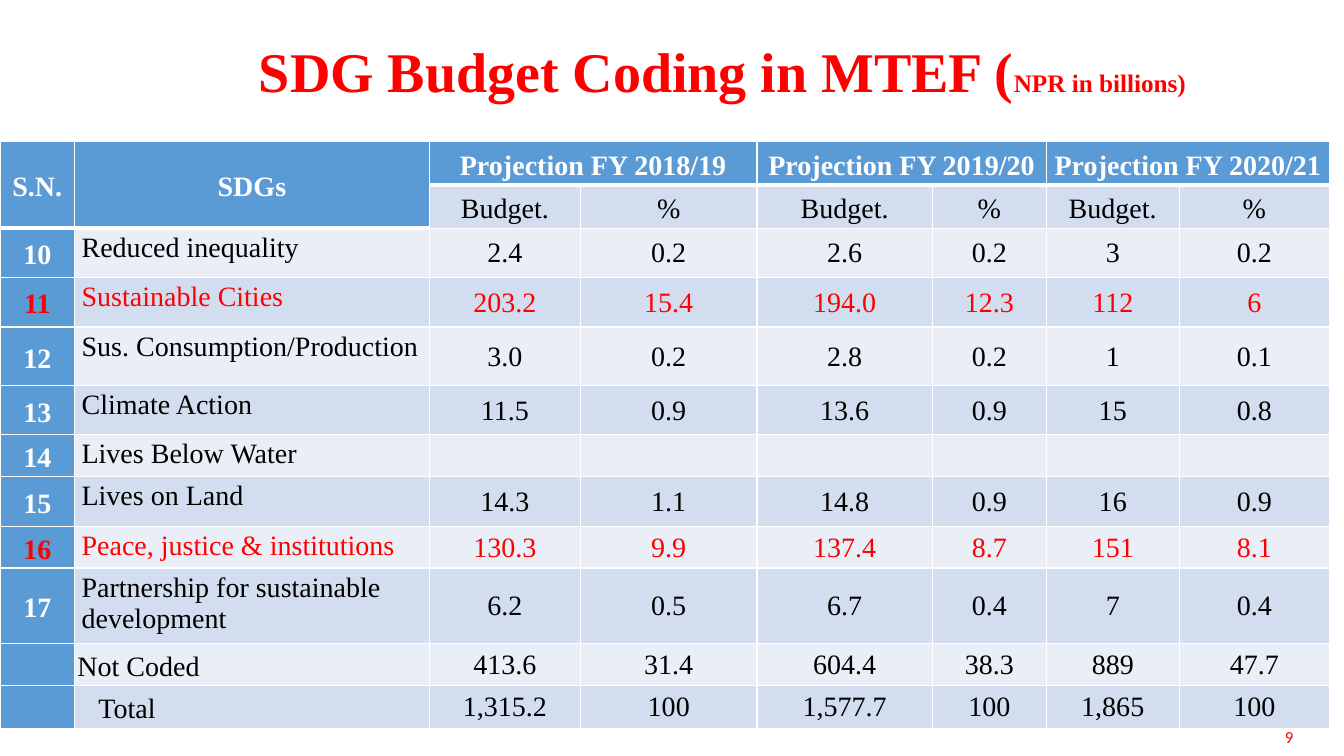
from lxml.etree import SubElement
from pptx import Presentation
from pptx.dml.color import RGBColor
from pptx.enum.text import MSO_ANCHOR as ANCHOR, PP_ALIGN as ALIGN
from pptx.oxml.ns import qn
from pptx.util import Pt

COLORS = {"red": "FF0000", "white": "FFFFFF", "black": "000000",
          "blue": "5B9BD5", "dark": "D2DEEF", "light": "EAEFF7"}
SERIF = "Times New Roman"
COL_WIDTHS = [53.3, 253.4, 108, 126, 125.3, 81.4, 95, 107.3]
ROW_HEIGHTS = [31.4, 30.7, 35, 35.5, 42.1, 35, 29.3, 35.5, 29.3, 53.5, 30, 30.7]
YEARS = ["2018/19", "2019/20", "2020/21"]
GOALS = [
    ("10", "Reduced inequality", "2.4", "0.2", "2.6", "0.2", "3", "0.2"),
    ("11", "Sustainable Cities", "203.2", "15.4", "194.0", "12.3", "112", "6"),
    ("12", "Sus. Consumption/Production", "3.0", "0.2", "2.8", "0.2", "1", "0.1"),
    ("13", "Climate Action", "11.5", "0.9", "13.6", "0.9", "15", "0.8"),
    ("14", "Lives Below Water", "", "", "", "", "", ""),
    ("15", "Lives on Land", "14.3", "1.1", "14.8", "0.9", "16", "0.9"),
    ("16", "Peace, justice & institutions", "130.3", "9.9", "137.4", "8.7", "151", "8.1"),
    ("17", "Partnership for sustainable development", "6.2", "0.5", "6.7", "0.4", "7", "0.4"),
    ("", "Not Coded", "413.6", "31.4", "604.4", "38.3", "889", "47.7"),
    ("", "Total", "1,315.2", "100", "1,577.7", "100", "1,865", "100"),
]
HIGHLIGHTED = {"11", "16"}


def add_run(p, text, size, color, bold=False, font=SERIF):
    """Add one formatted run to a paragraph."""
    r = p.add_run()
    r.text = text
    r.font.size, r.font.bold, r.font.name = Pt(size), bold, font
    r.font.color.rgb = RGBColor.from_string(COLORS[color])


def set_insets(box, left, top, right, bottom):
    """Set the four inner margins of a cell or text frame."""
    box.margin_left, box.margin_top = Pt(left), Pt(top)
    box.margin_right, box.margin_bottom = Pt(right), Pt(bottom)


def style_cell(cell, fill, top=1, bottom=1):
    """Give a cell white borders and a solid fill."""
    tcPr = cell._tc.get_or_add_tcPr()
    for side, width in (("L", 1), ("R", 1), ("T", top), ("B", bottom)):
        ln = SubElement(tcPr, qn(f"a:ln{side}"), w=str(Pt(width)))
        SubElement(SubElement(ln, qn("a:solidFill")), qn("a:srgbClr"), val=COLORS["white"])
    cell.fill.solid()
    cell.fill.fore_color.rgb = RGBColor.from_string(COLORS[fill])


def write_cell(cell, text, color, bold=False, insets=(2, 0, 2, 0),
               align=ALIGN.CENTER, anchor=ANCHOR.MIDDLE, spacing=1.15):
    """Write a single paragraph into a cell."""
    set_insets(cell, *insets)
    cell.vertical_anchor = anchor
    if text:
        p = cell.text_frame.paragraphs[0]
        p.alignment, p.line_spacing = align, spacing
        add_run(p, text, 20, color, bold)


def add_text_box(s, left, top, width, height, align):
    """Add a middle-anchored text box and return its frame and paragraph."""
    tf = s.shapes.add_textbox(Pt(left), Pt(top), Pt(width), Pt(height)).text_frame
    tf.word_wrap = True
    tf.vertical_anchor = ANCHOR.MIDDLE
    p = tf.paragraphs[0]
    p.alignment = align
    return tf, p


def add_title(s, left, top, width, height):
    """Place the title with its unit in smaller type."""
    tf, p = add_text_box(s, left, top, width, height, ALIGN.CENTER)
    set_insets(tf, 37.2, 3.6, 7.2, 3.6)
    p.line_spacing = 0.9
    add_run(p, "SDG Budget Coding in MTEF (", 40, "red", True)
    add_run(p, "NPR in billions)", 18, "red", True)


def add_page_number(s, left, top, width, height):
    """Place the page number at the lower right."""
    p = add_text_box(s, left, top, width, height, ALIGN.RIGHT)[1]
    add_run(p, "9", 12, "red", font="Calibri")


def fill_header(table):
    """Merge and label the two header rows."""
    for c in range(len(COL_WIDTHS)):
        style_cell(table.cell(0, c), "blue", bottom=3)
        style_cell(table.cell(1, c), "blue" if c < 2 else "dark",
                   top=3, bottom=3 if c < 2 else 1)
    for c, label in enumerate(("S.N.", "SDGs")):
        table.cell(0, c).merge(table.cell(1, c))
        write_cell(table.cell(0, c), label, "white", True)
    for i, year in enumerate(YEARS):
        c = 2 + 2 * i
        table.cell(0, c).merge(table.cell(0, c + 1))
        write_cell(table.cell(0, c), f"Projection FY {year}", "white", True)
        write_cell(table.cell(1, c), "Budget.", "black")
        write_cell(table.cell(1, c + 1), "%", "black")


def fill_goal(table, row, goal):
    """Fill one body row with its number, name and projections."""
    number, name, *values = goal
    marked = number in HIGHLIGHTED
    color = "red" if marked else "black"
    band = "dark" if row % 2 else "light"
    for c in range(len(goal)):
        style_cell(table.cell(row, c), band if c else "blue",
                   top=3 if row == 2 and c < 2 else 1)
    write_cell(table.cell(row, 0), number, "red" if marked else "white", True)
    if number:
        write_cell(table.cell(row, 1), name, color, insets=(5, 2.9, 5, 2.9),
                   align=ALIGN.LEFT, anchor=ANCHOR.TOP, spacing=1)
    else:
        write_cell(table.cell(row, 1), name, color, align=ALIGN.LEFT,
                   insets=(17 if name == "Total" else 2, 0, 2, 0))
    for c, value in enumerate(values, 2):
        write_cell(table.cell(row, c), value, color, insets=(0.7, 0.7, 0.7, 0), spacing=1)


def add_budget_table(s, left, top):
    """Build the budget table from its top left corner."""
    table = s.shapes.add_table(len(ROW_HEIGHTS), len(COL_WIDTHS), Pt(left), Pt(top),
                               Pt(sum(COL_WIDTHS)), Pt(sum(ROW_HEIGHTS))).table
    for column, width in zip(table.columns, COL_WIDTHS):
        column.width = Pt(width)
    for row, height in zip(table.rows, ROW_HEIGHTS):
        row.height = Pt(height)
    fill_header(table)
    for row, goal in enumerate(GOALS, 2):
        fill_goal(table, row, goal)


def main():
    """Build and save the slide."""
    prs = Presentation()
    prs.slide_width, prs.slide_height = Pt(960), Pt(540)
    s = prs.slides.add_slide(prs.slide_layouts[6])
    add_page_number(s, 741, 515.5, 190, 21.6)
    add_budget_table(s, 0, 101)
    add_title(s, 42, 14.4, 918, 77.8)
    prs.save("out.pptx")


if __name__ == "__main__":
    main()
